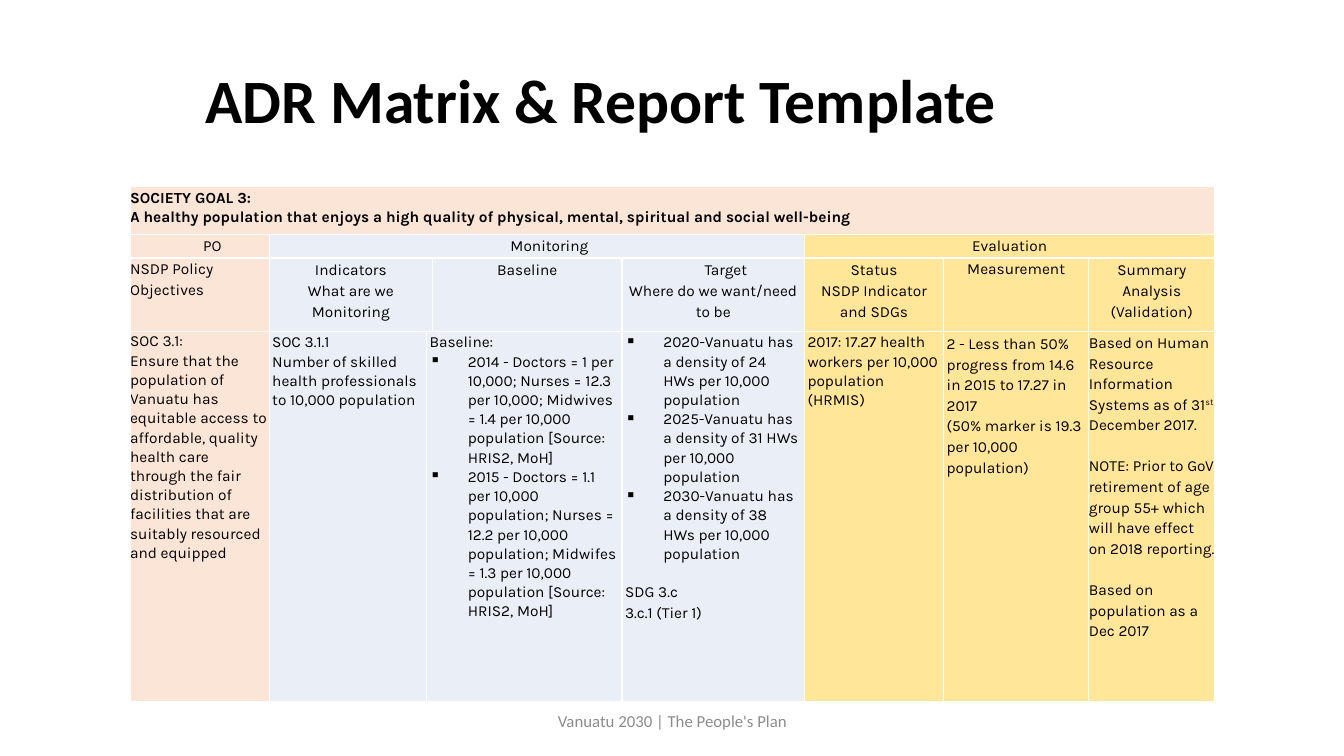
"""Build the ADR matrix and report template slide."""
from dataclasses import dataclass

from lxml.etree import SubElement
from pptx import Presentation
from pptx.dml.color import RGBColor
from pptx.enum.text import MSO_ANCHOR as Anchor, PP_ALIGN as Align
from pptx.oxml.ns import qn
from pptx.util import Inches, Pt


@dataclass(frozen=True)
class Theme:
    black: str = "000000"
    grey: str = "8C8C8C"
    white: str = "FFFFFF"
    peach: str = "FBE5D6"
    blue: str = "EAEFF7"
    yellow: str = "FFE699"
    heading_font: str = "Calibri"
    table_font: str = "Karla"
    title_size: int = 44
    footer_size: int = 12
    table_size: int = 11


theme = Theme()


def write(frame, text, font=theme.table_font, size=theme.table_size, color=theme.black,
          bold=False, align=Align.LEFT, spacing=1.15, before=0, left=0, bullet=None):
    """Add a paragraph; parts of the text between carets are superscript."""
    paragraph = frame.paragraphs[0] if not frame.text else frame.add_paragraph()
    paragraph.alignment = align
    paragraph.line_spacing = spacing
    paragraph.space_before = Pt(before)
    properties = paragraph._p.get_or_add_pPr()
    properties.set("marL", str(Inches(left)))
    properties.set("indent", str(-Inches(left) if bullet else 0))
    if bullet:
        SubElement(properties, qn("a:buChar"), char=bullet)
    for index, part in enumerate(text.split("^")):
        run = paragraph.add_run()
        run.text = part
        run.font.name = font
        run.font.size = Pt(size)
        run.font.bold = bold
        run.font.color.rgb = RGBColor.from_string(color)
        if index % 2:
            run._r.get_or_add_rPr().set("baseline", "30000")


def style_cell(cell, fill, padded):
    """Give a cell white borders, a fill and margins."""
    properties = cell._tc.get_or_add_tcPr()
    for side in ("lnL", "lnR", "lnT", "lnB"):
        line = SubElement(properties, qn(f"a:{side}"), w=str(Pt(1)))
        line_fill = SubElement(line, qn("a:solidFill"))
        SubElement(line_fill, qn("a:srgbClr"), val=theme.white)
    cell.fill.solid()
    cell.fill.fore_color.rgb = RGBColor.from_string(fill)
    cell.margin_left = cell.margin_right = Inches(0.03 if padded else 0)
    cell.margin_top = Inches(0.01 if padded else 0)
    cell.margin_bottom = 0


presentation = Presentation()
presentation.slide_width = Inches(13.33)
presentation.slide_height = Inches(7.5)
slide = presentation.slides.add_slide(presentation.slide_layouts[6])

labels = [
    ("ADR Matrix & Report Template", (1.94, 0.3, 9.11, 1.45),
     dict(size=theme.title_size, bold=True, spacing=0.9)),
    ("Vanuatu 2030 | The People's Plan", (4.42, 6.95, 4.5, 0.4),
     dict(size=theme.footer_size, color=theme.grey, align=Align.CENTER, spacing=1.0)),
]
for text, box, style in labels:
    frame = slide.shapes.add_textbox(*map(Inches, box)).text_frame
    frame.word_wrap = True
    frame.vertical_anchor = Anchor.MIDDLE
    write(frame, text, font=theme.heading_font, **style)

column_widths = [1.38, 1.56, 0.06, 1.88, 1.81, 1.38, 1.44, 1.25]
row_heights = [0.48, 0.23, 0.73, 3.67]
table = slide.shapes.add_table(
    len(row_heights), len(column_widths),
    Inches(1.29), Inches(1.85), Inches(10.75), Inches(5.11)).table
table.first_row = table.horz_banding = False
for column, width in zip(table.columns, column_widths):
    column.width = Inches(width)
for row, height in zip(table.rows, row_heights):
    row.height = Inches(height)

plain = dict()
tight = dict(spacing=1.07)
centered = dict(align=Align.CENTER)
shifted = dict(align=Align.CENTER, left=0.25)
bulleted = dict(spacing=1.07, left=0.38, bullet="▪")
after_gap = dict(before=14.5)

matrix = [
    [
        (8, theme.peach, False, [
            ("SOCIETY GOAL 3:", dict(bold=True)),
            ("A healthy population that enjoys a high quality of physical, mental, "
             "spiritual and social well-being", dict(bold=True, spacing=1.07))]),
    ],
    [
        (1, theme.peach, False, [("PO", shifted)]),
        (4, theme.blue, False, [("Monitoring", shifted)]),
        (3, theme.yellow, False, [("Evaluation", centered)]),
    ],
    [
        (1, theme.peach, False, [("NSDP Policy Objectives", plain)]),
        (2, theme.blue, True, [("Indicators", centered), ("What are we Monitoring", centered)]),
        (1, theme.blue, True, [("Baseline", centered)]),
        (1, theme.blue, True, [("Target", shifted), ("Where do we want/need to be", centered)]),
        (1, theme.yellow, True, [("Status", centered), ("NSDP Indicator and SDGs", centered)]),
        (1, theme.yellow, False, [("Measurement", centered)]),
        (1, theme.yellow, True, [("Summary Analysis", centered), ("(Validation)", centered)]),
    ],
    [
        (1, theme.peach, False, [
            ("SOC 3.1:", tight),
            ("Ensure that the population of Vanuatu has equitable access to affordable, "
             "quality health care through the fair distribution of facilities that are "
             "suitably resourced and equipped", tight)]),
        (1, theme.blue, True, [
            ("SOC 3.1.1", tight),
            ("Number of skilled health professionals to 10,000 population", tight)]),
        (2, theme.blue, True, [
            ("Baseline:", tight),
            ("2014 - Doctors = 1 per 10,000; Nurses = 12.3 per 10,000; Midwives = 1.4 per "
             "10,000 population [Source: HRIS2, MoH]", bulleted),
            ("2015 - Doctors = 1.1 per 10,000 population; Nurses = 12.2 per 10,000 population; "
             "Midwifes = 1.3 per 10,000 population [Source: HRIS2, MoH]", bulleted)]),
        (1, theme.blue, True, [
            *[(f"{year}-Vanuatu has a density of {density} HWs per 10,000 population", bulleted)
              for year, density in ((2020, 24), (2025, 31), (2030, 38))],
            ("SDG 3.c", dict(spacing=1.07, before=13.75)),
            ("3.c.1 (Tier 1)", plain)]),
        (1, theme.yellow, True, [
            ("2017: 17.27 health workers per 10,000", tight),
            ("population (HRMIS)", tight)]),
        (1, theme.yellow, True, [
            ("2 - Less than 50% progress from 14.6 in 2015 to 17.27 in 2017", plain),
            ("(50% marker is 19.3 per 10,000 population)", plain)]),
        (1, theme.yellow, False, [
            ("Based on Human Resource Information Systems as of 31^st^ December 2017.", plain),
            ("NOTE: Prior to GoV retirement of age group 55+ which will have effect on "
             "2018 reporting.", after_gap),
            ("Based on population as a Dec 2017", after_gap)]),
    ],
]
for row_index, entries in enumerate(matrix):
    column_index = 0
    for span, fill, padded, paragraphs in entries:
        last_column = column_index + span - 1
        for covered in range(column_index, last_column + 1):
            style_cell(table.cell(row_index, covered), fill, padded)
        cell = table.cell(row_index, column_index)
        if span > 1:
            cell.merge(table.cell(row_index, last_column))
        for text, style in paragraphs:
            write(cell.text_frame, text, **style)
        column_index += span

presentation.save("out.pptx")
